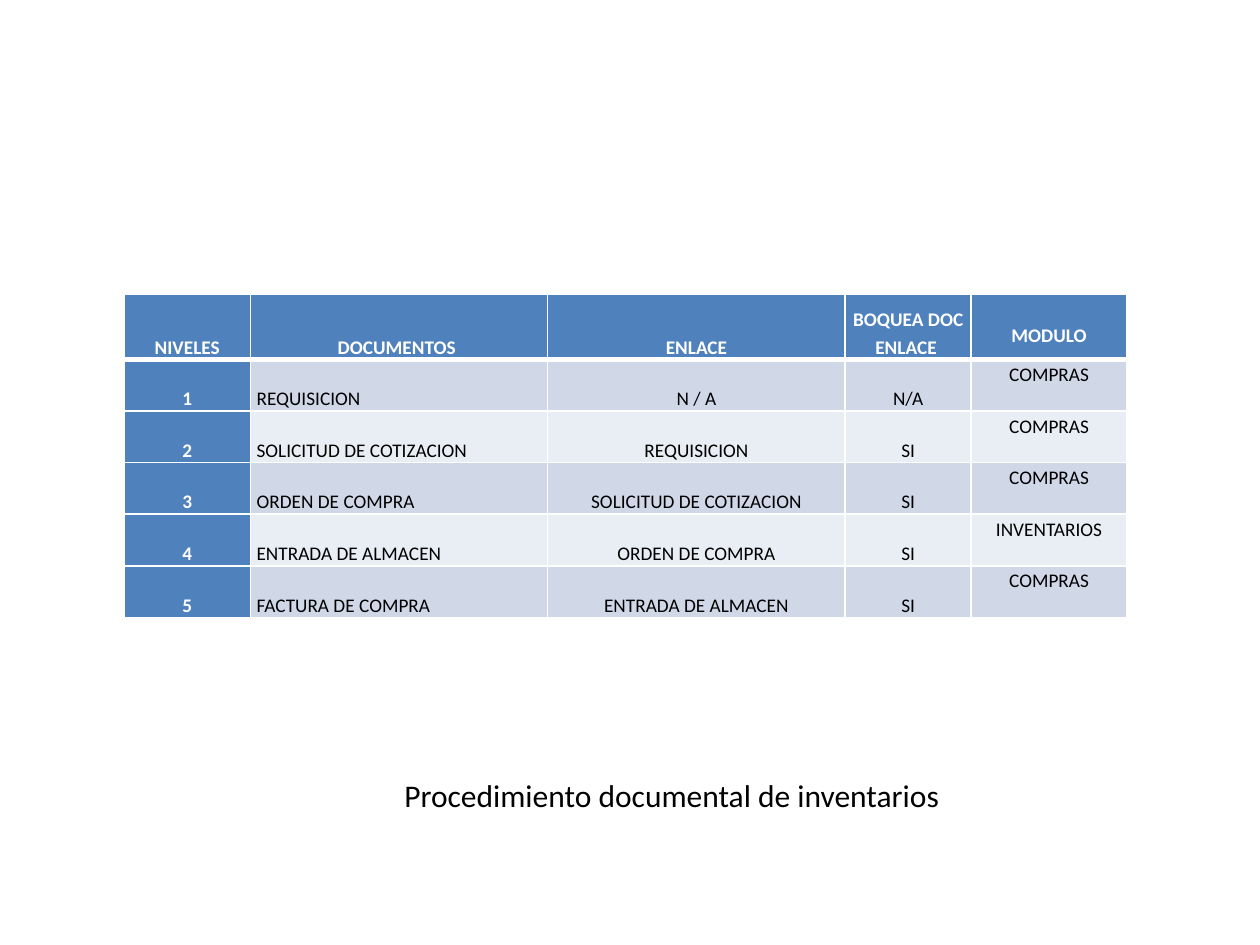
from pptx import Presentation
from pptx.dml.color import RGBColor
from pptx.enum import text
from pptx.oxml.xmlchemy import OxmlElement
from pptx.util import Pt

COLORS = {
    "header": "4F81BD",
    "band_dark": "D0D8E8",
    "band_light": "E9EDF4",
    "white": "FFFFFF",
    "black": "000000",
}
HEADERS = ["NIVELES", "DOCUMENTOS ", "ENLACE", "BOQUEA DOC ENLACE ", "MODULO"]
LEVELS = [
    ["1", "REQUISICION", "N / A", "N/A", "COMPRAS"],
    ["2", "SOLICITUD DE COTIZACION", "REQUISICION", "SI", "COMPRAS"],
    ["3", "ORDEN DE COMPRA", "SOLICITUD DE COTIZACION", "SI", "COMPRAS"],
    ["4", "ENTRADA DE ALMACEN", "ORDEN DE COMPRA", "SI", "INVENTARIOS"],
    ["5", "FACTURA DE COMPRA", "ENTRADA DE ALMACEN", "SI", "COMPRAS"],
]
COL_WIDTHS = [72, 170, 170, 72, 89]
HEADER_HEIGHT, ROW_HEIGHT = 37.4, 29.5
DOCUMENT_COL, MODULE_COL = 1, 4


class SlideBuilder:
    font = "Calibri"
    line_spacing = 1.15

    def __init__(self, slide):
        self.slide = slide

    def run(self, p, content, size, color, bold=False):
        r = p.add_run()
        r.text = content
        r.font.name = self.font
        r.font.size = Pt(size)
        r.font.bold = bold
        r.font.color.rgb = RGBColor.from_string(COLORS[color])

    def borders(self, cell, top, bottom):
        tc_pr = cell._tc.get_or_add_tcPr()
        for side, width in (("L", 1), ("R", 1), ("T", top), ("B", bottom)):
            ln = OxmlElement(f"a:ln{side}")
            ln.set("w", str(Pt(width)))
            fill = OxmlElement("a:solidFill")
            color = OxmlElement("a:srgbClr")
            color.set("val", COLORS["white"])
            fill.append(color)
            ln.append(fill)
            tc_pr.append(ln)

    def cell(self, cell, content, row, col):
        is_head = row == 0 or col == 0
        band = "band_dark" if row % 2 else "band_light"
        self.borders(cell, 3 if row == 1 else 1, 3 if row == 0 else 1)
        cell.fill.solid()
        cell.fill.fore_color.rgb = RGBColor.from_string(COLORS["header" if is_head else band])

        in_module = col == MODULE_COL
        cell.margin_left = cell.margin_right = Pt(3.6)
        cell.margin_bottom = Pt(0)
        # The module heading starts one line down from the top
        cell.margin_top = Pt(15.4 if in_module and row == 0 else 0)
        cell.vertical_anchor = text.MSO_ANCHOR.TOP if in_module else text.MSO_ANCHOR.BOTTOM

        p = cell.text_frame.paragraphs[0]
        left = col == DOCUMENT_COL and row > 0
        p.alignment = text.PP_ALIGN.LEFT if left else text.PP_ALIGN.CENTER
        p.line_spacing = self.line_spacing
        self.run(p, content, 11, "white" if is_head else "black", is_head)

    def table(self, rows, x, y, widths, heights):
        frame = self.slide.shapes.add_table(
            len(rows), len(widths), Pt(x), Pt(y), Pt(sum(widths)), Pt(sum(heights)))
        table = frame.table
        for column, width in zip(table.columns, widths):
            column.width = Pt(width)
        for i, (values, height) in enumerate(zip(rows, heights)):
            table.rows[i].height = Pt(height)
            for j, value in enumerate(values):
                self.cell(table.cell(i, j), value, i, j)

    def caption(self, content, x, y, w, h):
        tf = self.slide.shapes.add_textbox(Pt(x), Pt(y), Pt(w), Pt(h)).text_frame
        tf.word_wrap = False
        tf.auto_size = text.MSO_AUTO_SIZE.SHAPE_TO_FIT_TEXT
        self.run(tf.paragraphs[0], content, 18, "black")


def main():
    prs = Presentation()
    prs.slide_width, prs.slide_height = Pt(720), Pt(540)
    s = SlideBuilder(prs.slides.add_slide(prs.slide_layouts[6]))

    # Document levels
    heights = [HEADER_HEIGHT] + [ROW_HEIGHT] * len(LEVELS)
    s.table([HEADERS] + LEVELS, 71, 168, COL_WIDTHS, heights)

    # Caption below the table
    s.caption("Procedimiento documental de inventarios", 224, 440, 324, 29)

    prs.save("out.pptx")


if __name__ == "__main__":
    main()
